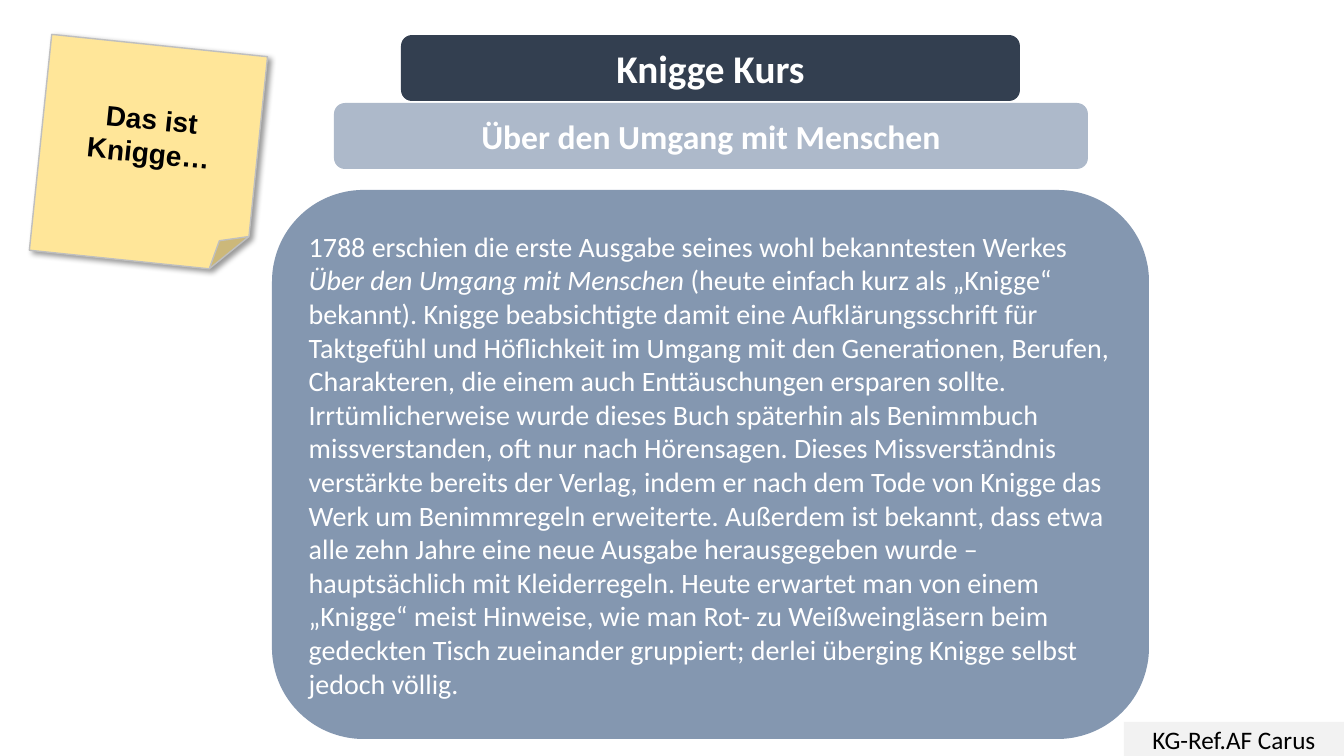
import pptx
import pptx.util
import pptx.dml.color
import pptx.enum.shapes
import pptx.enum.text
import lxml.etree

RGB = pptx.dml.color.RGBColor
SHAPE = pptx.enum.shapes.MSO_SHAPE
ALIGN = pptx.enum.text.PP_ALIGN

PX = 914400 / 100.8
SLIDE_SIZE = (1344, 756)

BLACK = RGB(0x00, 0x00, 0x00)
WHITE = RGB(0xFF, 0xFF, 0xFF)
PALE_GREY = RGB(0xF2, 0xF2, 0xF2)
EDGE_GREY = RGB(0xBF, 0xBF, 0xBF)
NOTE_YELLOW = RGB(0xFF, 0xE6, 0x99)
NAVY = RGB(0x33, 0x3F, 0x50)
LIGHT_SLATE = RGB(0xAD, 0xB9, 0xCA)
SLATE = RGB(0x84, 0x97, 0xB0)

BOOK = "Über den Umgang mit Menschen"
HISTORY = [
    [
        ("1788 erschien die erste Ausgabe seines wohl bekanntesten Werkes ", False),
        (BOOK, True),
        (" (heute einfach kurz als „Knigge“ bekannt). Knigge beabsichtigte damit "
         "eine Aufklärungsschrift für Taktgefühl und Höflichkeit im Umgang mit den "
         "Generationen, Berufen, Charakteren, die einem auch Enttäuschungen "
         "ersparen sollte.", False),
    ],
    [
        ("Irrtümlicherweise wurde dieses Buch späterhin als Benimmbuch "
         "missverstanden, oft nur nach Hörensagen. Dieses Missverständnis "
         "verstärkte bereits der Verlag, indem er nach dem Tode von Knigge das "
         "Werk um Benimmregeln erweiterte. Außerdem ist bekannt, dass etwa alle "
         "zehn Jahre eine neue Ausgabe herausgegeben wurde – hauptsächlich mit "
         "Kleiderregeln. Heute erwartet man von einem „Knigge“ meist Hinweise, "
         "wie man Rot- zu Weißweingläsern beim gedeckten Tisch zueinander "
         "gruppiert; derlei überging Knigge selbst jedoch völlig.", False),
    ],
]

FOOTER = dict(box=(1124, 722, 220, 34), outline=SHAPE.RECTANGLE, fill=PALE_GREY,
              text=[[("KG-Ref.AF Carus", False)]], size=18, color=BLACK)
NOTE = dict(box=(40, 45, 217, 217), outline=SHAPE.FOLDED_CORNER, fill=NOTE_YELLOW,
            text=[[("Das ist Knigge…", False)]], size=20, color=BLACK,
            font="Arial", bold=True)
TITLE = dict(box=(401, 35, 619, 66), outline=SHAPE.ROUNDED_RECTANGLE, fill=NAVY,
             text=[[("Knigge Kurs", False)]], size=28, bold=True)
SUBTITLE = dict(box=(334, 103, 754, 66), outline=SHAPE.ROUNDED_RECTANGLE,
                fill=LIGHT_SLATE, text=[[(BOOK, False)]], size=24, bold=True)
BODY = dict(box=(272, 190, 877, 549), outline=SHAPE.ROUNDED_RECTANGLE, fill=SLATE,
            text=HISTORY, size=20, align=ALIGN.LEFT)

NOTE_SHADOW = """
<a:effectLst xmlns:a="http://schemas.openxmlformats.org/drawingml/2006/main">
  <a:outerShdw blurRad="50800" dist="38100" dir="2700000" algn="tl" rotWithShape="0">
    <a:srgbClr val="000000"><a:alpha val="40000"/></a:srgbClr>
  </a:outerShdw>
</a:effectLst>"""


def emu(px):
    return pptx.util.Emu(round(px * PX))


def add_panel(slide, box, outline, fill, text, size, color=WHITE,
              font="Calibri", bold=False, align=ALIGN.CENTER):
    panel = slide.shapes.add_shape(outline, *map(emu, box))
    panel.shadow.inherit = False
    panel.fill.solid()
    panel.fill.fore_color.rgb = fill
    panel.line.fill.background()
    frame = panel.text_frame
    frame.word_wrap = True
    frame.vertical_anchor = pptx.enum.text.MSO_ANCHOR.MIDDLE
    for index, runs in enumerate(text):
        paragraph = frame.add_paragraph() if index else frame.paragraphs[0]
        paragraph.alignment = align
        for words, italic in runs:
            run = paragraph.add_run()
            run.text = words
            run.font.name = font
            run.font.size = pptx.util.Pt(size)
            run.font.bold = bold
            run.font.italic = italic
            run.font.color.rgb = color
    return panel


def main():
    deck = pptx.Presentation()
    deck.slide_width, deck.slide_height = map(emu, SLIDE_SIZE)
    slide = deck.slides.add_slide(deck.slide_layouts[6])

    add_panel(slide, **FOOTER)
    note = add_panel(slide, **NOTE)
    note.rotation = 5.9
    note.line.color.rgb = EDGE_GREY
    note.line.width = pptx.util.Pt(1)
    properties = note.element.spPr
    no_effects = properties.find(pptx.oxml.ns.qn("a:effectLst"))
    properties.replace(no_effects, lxml.etree.fromstring(NOTE_SHADOW))
    for panel in (TITLE, SUBTITLE, BODY):
        add_panel(slide, **panel)

    deck.save("out.pptx")


if __name__ == "__main__":
    main()
